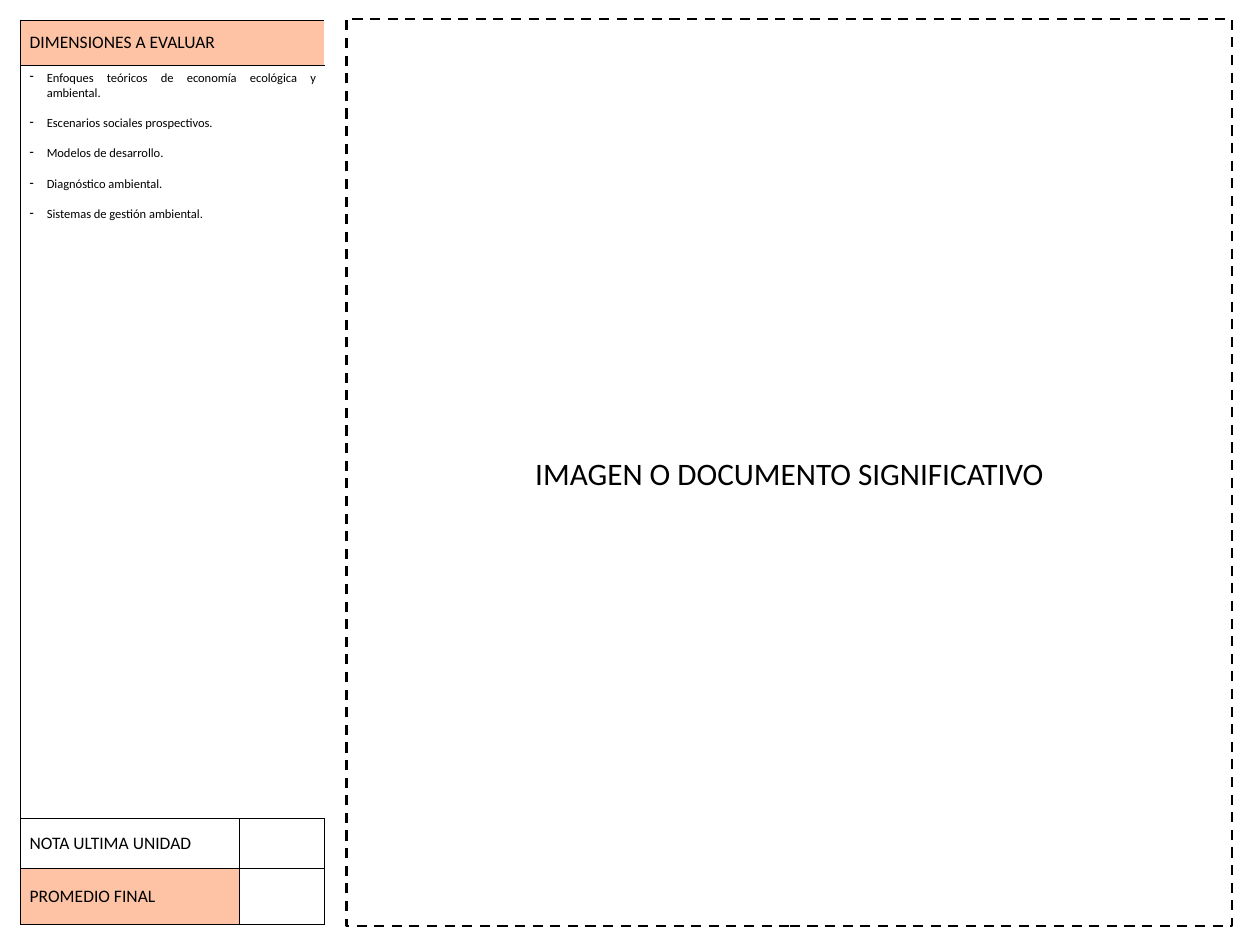
from lxml import etree
from pptx import Presentation
from pptx.dml.color import RGBColor
from pptx.enum import dml, shapes, text
from pptx.oxml.ns import qn
from pptx.util import Inches, Pt


def paint(fill, color):
    fill.solid()
    fill.fore_color.rgb = RGBColor.from_string(color)


def style(para, size):
    para.font.size = Pt(size)
    para.font.name = "Calibri"
    para.font.color.rgb = RGBColor.from_string("000000")


deck = Presentation()
deck.slide_width, deck.slide_height = Inches(14), Inches(10.5)
slide = deck.slides.add_slide(deck.slide_layouts[6])

frame = slide.shapes.add_shape(
    shapes.MSO_SHAPE.RECTANGLE, Inches(3.85), Inches(0.21), Inches(9.84), Inches(10.08)
)
frame.shadow.inherit = False
frame.fill.background()
paint(frame.line.fill, "000000")
frame.line.width = Pt(2)
frame.line.dash_style = dml.MSO_LINE.DASH
frame.text_frame.text = "IMAGEN O DOCUMENTO SIGNIFICATIVO"
frame.text_frame.vertical_anchor = text.MSO_ANCHOR.MIDDLE
title = frame.text_frame.paragraphs[0]
title.alignment = text.PP_ALIGN.CENTER
style(title, 25)

grid = slide.shapes.add_table(
    4, 2, Inches(0.23), Inches(0.22), Inches(3.38), Inches(10.05)
).table
grid.first_row = grid.horz_banding = False
for col, width in zip(grid.columns, (2.43, 0.95)):
    col.width = Inches(width)
for row, height in zip(grid.rows, (0.51, 8.37, 0.55, 0.62)):
    row.height = Inches(height)
for r in range(2):
    grid.cell(r, 0).merge(grid.cell(r, 1))

topics = [
    "Enfoques teóricos de economía ecológica y ambiental.",
    "Escenarios sociales prospectivos.",
    "Modelos de desarrollo.",
    "Diagnóstico ambiental.",
    "Sistemas de gestión ambiental.",
]
labels = ["DIMENSIONES A EVALUAR", "\n".join(topics), "NOTA ULTIMA UNIDAD", "PROMEDIO FINAL"]
fills = ["FDC3A4", "FFFFFF", "FFFFFF", "FDC3A4"]
rules = [0.5, 1, 1, 0.5, 1]
bars = [1, 0.5, 1]

for r, label in enumerate(labels):
    for c in range(2):
        cell = grid.cell(r, c)
        props = cell._tc.get_or_add_tcPr()
        edges = zip("LRTB", (bars[c], bars[c + 1], rules[r], rules[r + 1]))
        for side, width in edges:
            if r < 2 and side == "LR"[1 - c]:
                continue
            line = etree.SubElement(props, qn(f"a:ln{side}"), w=str(Pt(width)))
            solid = etree.SubElement(line, qn("a:solidFill"))
            etree.SubElement(solid, qn("a:srgbClr"), val="000000")
        paint(cell.fill, "FFFFFF" if c and r > 1 else fills[r])
    cell = grid.cell(r, 0)
    cell.text = label
    if r != 1:
        cell.vertical_anchor = text.MSO_ANCHOR.MIDDLE
        style(cell.text_frame.paragraphs[0], 14)

for para in grid.cell(1, 0).text_frame.paragraphs:
    style(para, 10)
    para.alignment = text.PP_ALIGN.JUSTIFY
    para.space_after = Pt(12.2)
    props = para._p.get_or_add_pPr()
    props.set("marL", str(Inches(0.19)))
    props.set("indent", str(Inches(-0.19)))
    dash = etree.Element(qn("a:buChar"), char="-")
    props.find(qn("a:defRPr")).addprevious(dash)

deck.save("out.pptx")
